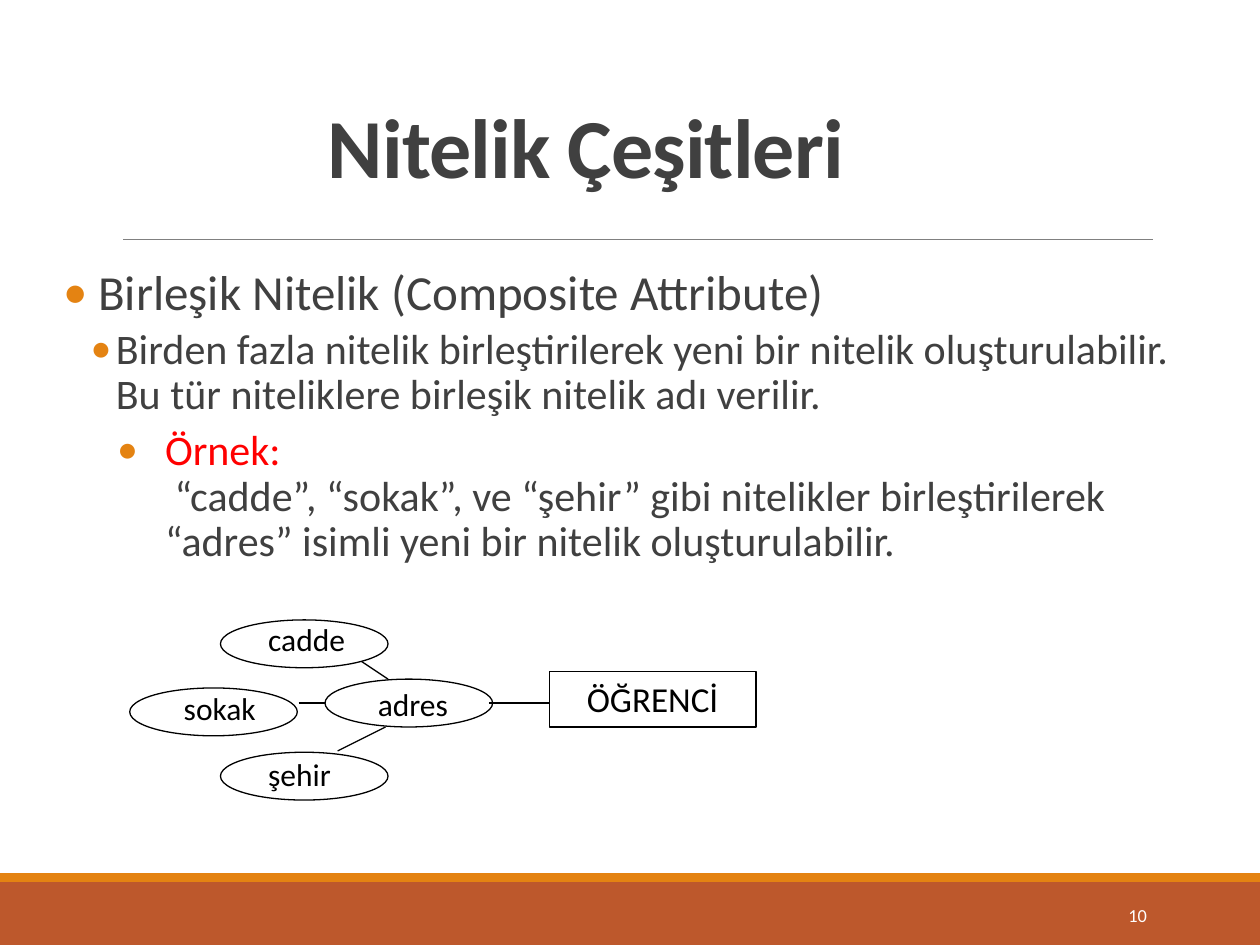
import pptx
import pptx.util
import pptx.dml.color
import pptx.enum.shapes
import pptx.enum.text
import pptx.oxml
import pptx.oxml.ns
from pptx.util import Inches

RGBColor = pptx.dml.color.RGBColor
RUST = RGBColor(0xBD, 0x58, 0x2C)
ORANGE = RGBColor(0xE4, 0x83, 0x12)
DARK = RGBColor(0x40, 0x40, 0x40)
GREY = RGBColor(0x80, 0x80, 0x80)
RED = RGBColor(0xFF, 0x00, 0x00)
BLACK = RGBColor(0x00, 0x00, 0x00)
WHITE = RGBColor(0xFF, 0xFF, 0xFF)

SHAPE = pptx.enum.shapes.MSO_SHAPE
ALIGN = pptx.enum.text.PP_ALIGN
ANCHOR = pptx.enum.text.MSO_ANCHOR

deck = pptx.Presentation()
deck.slide_width = Inches(10)
deck.slide_height = Inches(7.5)
page = deck.slides.add_slide(deck.slide_layouts[6])


def write(box, text, size, color, align=ALIGN.LEFT, anchor=ANCHOR.TOP, wrap=True):
    """Put one formatted paragraph in a box and return the paragraph."""
    box.text_frame.text = text
    box.text_frame.word_wrap = wrap
    box.text_frame.vertical_anchor = anchor
    para = box.text_frame.paragraphs[0]
    para.alignment = align
    font = para.runs[0].font
    font.name, font.size, font.color.rgb = "Calibri", pptx.util.Pt(size), color
    return para


def draw_line(x1, y1, x2, y2, color, width):
    line = page.shapes.add_connector(
        pptx.enum.shapes.MSO_CONNECTOR.STRAIGHT,
        Inches(x1), Inches(y1), Inches(x2), Inches(y2))
    line.line.color.rgb = color
    line.line.width = pptx.util.Pt(width)
    pptx.oxml.ns.qn("a:effectLst")
    line._element.spPr.append(pptx.oxml.parse_xml(
        "<a:effectLst %s/>" % pptx.oxml.ns.nsdecls("a")))


# Footer bands and title rule
for top, height, color in [(7, 0.5, RUST), (6.93, 0.07, ORANGE)]:
    band = page.shapes.add_shape(SHAPE.RECTANGLE, 0, Inches(top), Inches(10), Inches(height))
    band.shadow.inherit = False
    band.fill.solid()
    band.fill.fore_color.rgb = color
    band.line.fill.background()
draw_line(0.98, 1.9, 9.15, 1.9, GREY, 0.5)

# Title
title = page.shapes.add_textbox(Inches(1.18), Inches(0.68), Inches(6.94), Inches(0.92))
para = write(title, "Nitelik Çeşitleri", 48, DARK, ALIGN.CENTER, ANCHOR.BOTTOM)
para.line_spacing = 0.85
para.runs[0].font.bold = True
para.runs[0].font._element.set("spc", "-50")

# Bulleted text: text, level, left margin, indent, size, space before and after, run colours
bullets = [
    (" Birleşik Nitelik (Composite Attribute)", 0, 0.1, -0.1, 28, 12, 2, [DARK]),
    ("Birden fazla nitelik birleştirilerek yeni bir nitelik oluşturulabilir. "
     "Bu tür niteliklere birleşik nitelik adı verilir.", 1, 0.42, -0.2, 24, 2, 4, [DARK]),
    ("Örnek:\v “cadde”, “sokak”, ve “şehir” gibi nitelikler birleştirilerek "
     "“adres” isimli yeni bir nitelik oluşturulabilir.", 1, 0.81, -0.38, 24, 2, 4, [RED, DARK]),
]
body = page.shapes.add_textbox(Inches(0.5), Inches(2.08), Inches(8.92), Inches(2.75))
frame = body.text_frame
frame.word_wrap = True
frame.margin_left = frame.margin_right = 0
for index, (text, level, margin, indent, size, before, after, colors) in enumerate(bullets):
    para = frame.add_paragraph() if index else frame.paragraphs[0]
    para.text = text
    para.level = level
    para.line_spacing = 0.9
    para.space_before = pptx.util.Pt(before)
    para.space_after = pptx.util.Pt(after)
    for span, color in zip(para.runs, colors):
        span.font.name = "Calibri"
        span.font.size = pptx.util.Pt(size)
        span.font.color.rgb = color
    props = para._p.get_or_add_pPr()
    props.set("marL", str(Inches(margin)))
    props.set("indent", str(Inches(indent)))
    for xml in ('<a:buClr %s><a:srgbClr val="' + str(ORANGE) + '"/></a:buClr>',
                '<a:buFont %s typeface="Calibri"/>',
                '<a:buChar %s char="•"/>'):
        props.append(pptx.oxml.parse_xml(xml % pptx.oxml.ns.nsdecls("a")))

# Diagram outlines: the entity and its attribute ellipses
outlines = [(SHAPE.RECTANGLE, 4.36, 5.33, 1.64, 0.44)]
outlines += [(SHAPE.OVAL, left, top, 1.33, 0.38)
             for left, top in [(2.58, 5.39), (1.75, 5.97), (1.03, 5.46), (1.75, 4.92)]]
for kind, left, top, width, height in outlines:
    node = page.shapes.add_shape(kind, Inches(left), Inches(top), Inches(width), Inches(height))
    node.shadow.inherit = False
    node.fill.background()
    node.line.color.rgb = BLACK
    node.line.width = pptx.util.Pt(0.75)
    if kind == SHAPE.RECTANGLE:
        write(node, "ÖĞRENCİ", 20, BLACK, ALIGN.CENTER)

# Diagram links
for ends in [(3.88, 5.58, 4.36, 5.58), (2.87, 5.25, 3.08, 5.39),
             (2.37, 5.58, 2.58, 5.58), (2.68, 5.96, 3.06, 5.77)]:
    draw_line(*ends, BLACK, 0.75)

# Attribute names
for name, left, top, width, wrap in [("adres", 2.9, 5.39, 0.76, False),
                                     ("cadde", 2.03, 4.87, 0.95, True),
                                     ("sokak", 1.36, 5.42, 0.84, True),
                                     ("şehir", 2.03, 5.94, 0.71, False)]:
    label = page.shapes.add_textbox(Inches(left), Inches(top), Inches(width), Inches(0.44))
    write(label, name, 18, BLACK, wrap=wrap)

# Slide number
number = page.shapes.add_textbox(Inches(8.12), Inches(7.06), Inches(1.08), Inches(0.4))
write(number, "10", 10.5, WHITE, ALIGN.RIGHT, ANCHOR.MIDDLE)

deck.save("out.pptx")
